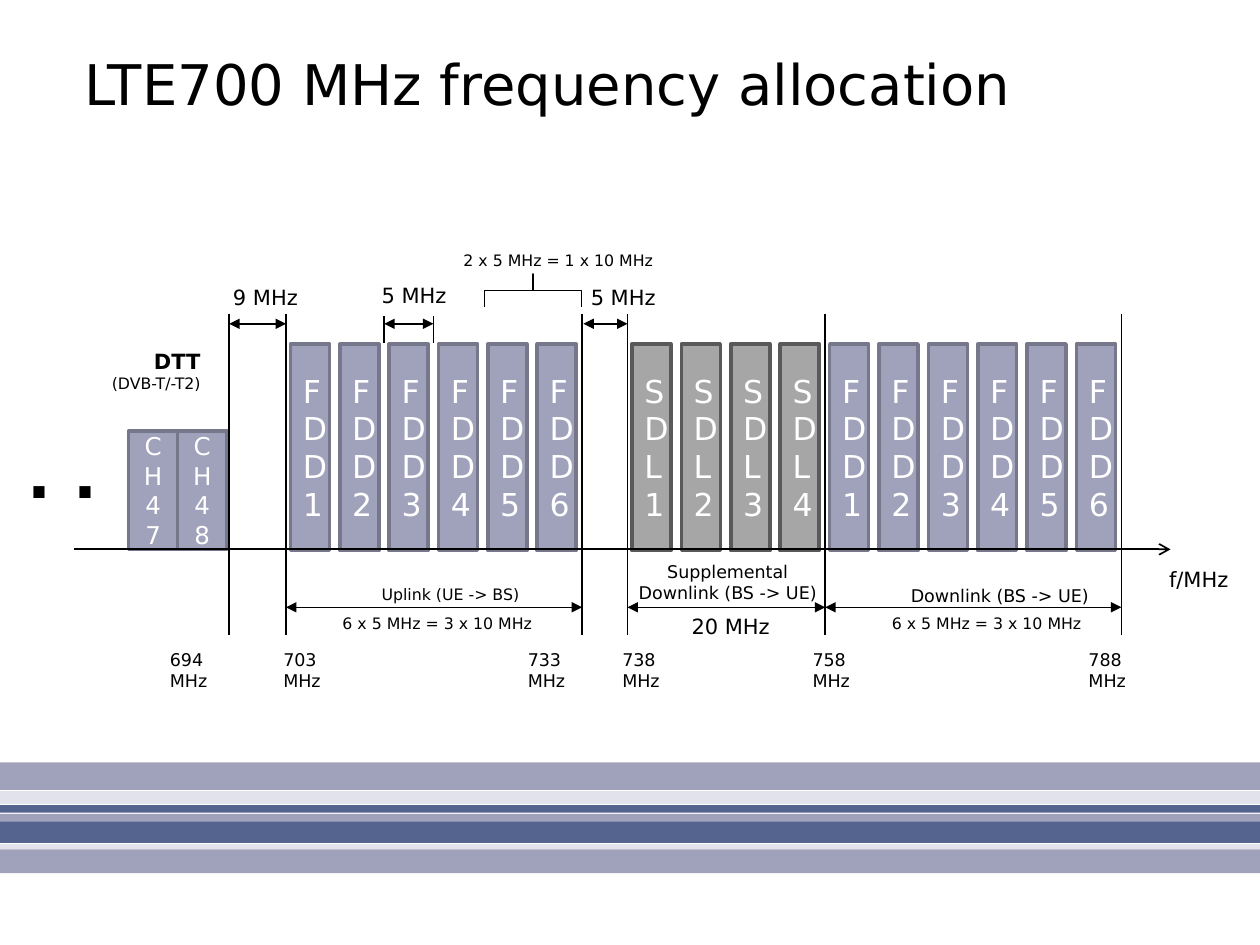
from collections import namedtuple

from lxml import etree
from pptx import Presentation
from pptx import util as u
from pptx.dml.color import RGBColor
from pptx.enum import shapes, text
from pptx.oxml import ns

# Grid of 100 columns and 75 rows; every length below is in grid units
COLUMNS, ROWS = 100, 75
UNIT = u.Inches(10) // COLUMNS
FONT = "DejaVu Sans"
BLACK, WHITE = "000000", "FFFFFF"
LAVENDER, NAVY, PALE = "A0A1BA", "54648F", "E1E2EB"
PAIRED = (LAVENDER, "76778A")
SUPPLEMENTAL = ("A6A6A6", "595959")
LEFT, CENTER, RIGHT = text.PP_ALIGN.LEFT, text.PP_ALIGN.CENTER, text.PP_ALIGN.RIGHT

Box = namedtuple("Box", "left top width height")


def grid(value):
    return u.Emu(round(value * UNIT))


def color(value):
    return RGBColor.from_string(value)


def write(paragraph, words, size, tint=BLACK, bold=False, align=LEFT):
    paragraph.alignment = align
    run = paragraph.add_run()
    run.text = words
    run.font.name = FONT
    run.font.size = u.Pt(size)
    run.font.bold = bold
    run.font.color.rgb = color(tint)


def add_label(slide, box, *lines, align=LEFT):
    """Each line is (words, size) or (words, size, bold)."""
    frame = slide.shapes.add_textbox(*map(grid, box)).text_frame
    frame.word_wrap = True
    for index, (words, size, *bold) in enumerate(lines):
        paragraph = frame.add_paragraph() if index else frame.paragraphs[0]
        write(paragraph, words, size, bold=bool(bold), align=align)


def add_block(slide, box, fill, line=None, words="", size=18):
    shape = slide.shapes.add_shape(shapes.MSO_SHAPE.RECTANGLE, *map(grid, box))
    shape.shadow.inherit = False
    shape.fill.solid()
    shape.fill.fore_color.rgb = color(fill)
    if line:
        shape.line.color.rgb = color(line)
        shape.line.width = u.Pt(2)
    else:
        shape.line.fill.background()
    if words:
        shape.text_frame.word_wrap = True
        shape.text_frame.vertical_anchor = text.MSO_ANCHOR.MIDDLE
        write(shape.text_frame.paragraphs[0], words, size, WHITE, align=CENTER)


def add_line(slide, start, end, width=1, head=None, tail=None):
    line = slide.shapes.add_connector(
        shapes.MSO_CONNECTOR.STRAIGHT, *map(grid, (*start, *end)))
    line.line.color.rgb = color(BLACK)
    line.line.width = u.Pt(width)
    outline = line.line._get_or_add_ln()
    for tag, kind in (("a:headEnd", head), ("a:tailEnd", tail)):
        if kind:
            etree.SubElement(outline, ns.qn(tag), type=kind)
    etree.SubElement(line._element.spPr, ns.qn("a:effectLst"))


def add_span(slide, left, right, row, width=1):
    add_line(slide, (left, row), (right, row), width, "triangle", "triangle")


def add_title(slide, box, words):
    title = slide.shapes.title
    title.left, title.top, title.width, title.height = map(grid, box)
    frame = title.text_frame
    frame.margin_left = frame.margin_top = frame.margin_right = frame.margin_bottom = 0
    frame.vertical_anchor = text.MSO_ANCHOR.TOP
    write(frame.paragraphs[0], words, 32)


def add_stripes(slide, box):
    for offset, height, fill in (
            (0, 2.2, LAVENDER), (2.3, 1, PALE), (3.4, 0.6, NAVY), (4.1, 0.6, LAVENDER),
            (4.7, 1.7, NAVY), (6.5, 0.4, PALE), (6.9, 1.9, LAVENDER)):
        add_block(slide, Box(box.left, box.top + offset, box.width, height), fill)


def add_band(slide, box, prefix, count, colors):
    """Equal carriers across the band, and the arrow that spans it."""
    pitch = box.width / count
    for index in range(count):
        carrier = Box(box.left + 0.35 + index * pitch, box.top + 2.4, 3.1, 16.4)
        add_block(slide, carrier, *colors, f"{prefix}{index + 1}")
    add_span(slide, box.left, box.left + box.width, box.top + 23.3, 0.75)


def add_television(slide, box):
    """Broadcast channels below the mobile bands."""
    add_label(slide, Box(box.left + 5.3, box.top, 10.4, 4.5),
              ("DTT", 12, True), ("(DVB-T/-T2)", 9), align=RIGHT)
    add_label(slide, Box(box.left, box.top + 6.9, 9.4, 7.1), (". .", 36, True))
    for index, channel in enumerate(("CH47", "CH48")):
        add_block(slide, Box(box.left + 9 + index * 3.9, box.top + 7, 3.9, 9.4),
                  *PAIRED, channel, 14)


def add_axis(slide, box):
    """Band edges with their frequencies, and the frequency axis."""
    for edge, label, frequency in (
            (18.2, 12.5, 694), (22.7, 21.5, 703), (46.2, 40.9, 733),
            (49.8, 48.4, 738), (65.5, 63.5, 758), (89, 85.4, 788)):
        edge, bottom = box.left + edge, box.top + box.height
        add_line(slide, (edge, box.top), (edge, bottom))
        add_label(slide, Box(box.left + label, bottom + 0.6, 7.1, 2.7),
                  (f"{frequency} MHz", 10))
    axis_row = box.top + 18.7
    add_line(slide, (box.left + 5.9, axis_row), (box.left + box.width, axis_row),
             tail="arrow")
    add_label(slide, Box(box.left + 91.8, box.top + 19.6, 7.1, 3), ("f/MHz", 12))


def add_spacings(slide, box):
    """Gaps and carrier widths above the bands."""
    for left, right, label, row, words in (
            (18.2, 22.7, 17.5, 2.9, "9 MHz"), (30.5, 34.4, 29.3, 2.7, "5 MHz"),
            (46.3, 49.8, 45.9, 2.9, "5 MHz")):
        add_span(slide, box.left + left, box.left + right, box.top + 6.5)
        add_label(slide, Box(box.left + label, box.top + row, 10.2, 3), (words, 12))
    for column in (30.5, 34.4):
        add_line(slide, (box.left + column, box.top + 5.9),
                 (box.left + column, box.top + 8))
    # Bracket over two neighbouring carriers
    brace = slide.shapes.add_shape(
        shapes.MSO_SHAPE.RIGHT_BRACE,
        *map(grid, (box.left + 41, box.top, 2.6, 7.7)))
    brace.rotation = 270
    brace.adjustments[0], brace.adjustments[1] = 0, 0.5
    brace.shadow.inherit = False
    brace.fill.background()
    brace.line.color.rgb = color(BLACK)
    brace.line.width = u.Pt(1)
    add_label(slide, Box(box.left + 35.8, box.top + 0.2, 17.9, 2.5),
              ("2 x 5 MHz = 1 x 10 MHz", 9))


def add_band_labels(slide, box):
    capacity = "6 x 5 MHz = 3 x 10 MHz"
    for left, top, width, height, words, size in (
            (29.3, 1.9, 13.5, 2.5, "Uplink (UE -> BS)", 9),
            (26.2, 4.2, 18, 2.5, capacity, 9),
            (53.9, 4.2, 11, 3, "20 MHz", 12),
            (71.3, 1.9, 16.9, 2.7, "Downlink (BS -> UE)", 10),
            (69.8, 4.2, 18, 2.5, capacity, 9)):
        add_label(slide, Box(box.left + left, box.top + top, width, height),
                  (words, size))
    add_label(slide, Box(box.left + 49.3, box.top, 16.9, 4.4),
              ("Supplemental", 10), ("Downlink (BS -> UE)", 10), align=CENTER)


def main():
    presentation = Presentation()
    presentation.slide_width = grid(COLUMNS)
    presentation.slide_height = grid(ROWS)
    slide = presentation.slides.add_slide(presentation.slide_layouts[5])

    add_stripes(slide, Box(0, 60.5, COLUMNS, 8.8))
    add_title(slide, Box(6.7, 3.9, 83.9, 9.3), "LTE700 MHz frequency allocation")
    add_television(slide, Box(1.2, 27.2, 16.8, 16.4))
    add_band(slide, Box(22.7, 24.9, 23.5, 25.5), "FDD", 6, PAIRED)
    add_band(slide, Box(49.8, 24.9, 15.7, 25.5), "SDL", 4, SUPPLEMENTAL)
    add_band(slide, Box(65.5, 24.9, 23.5, 25.5), "FDD", 6, PAIRED)
    add_axis(slide, Box(0, 24.9, 92.9, 25.5))
    add_spacings(slide, Box(0, 19.2, COLUMNS, 8))
    add_band_labels(slide, Box(0, 44, COLUMNS, 7.2))

    presentation.save("out.pptx")


if __name__ == "__main__":
    main()
